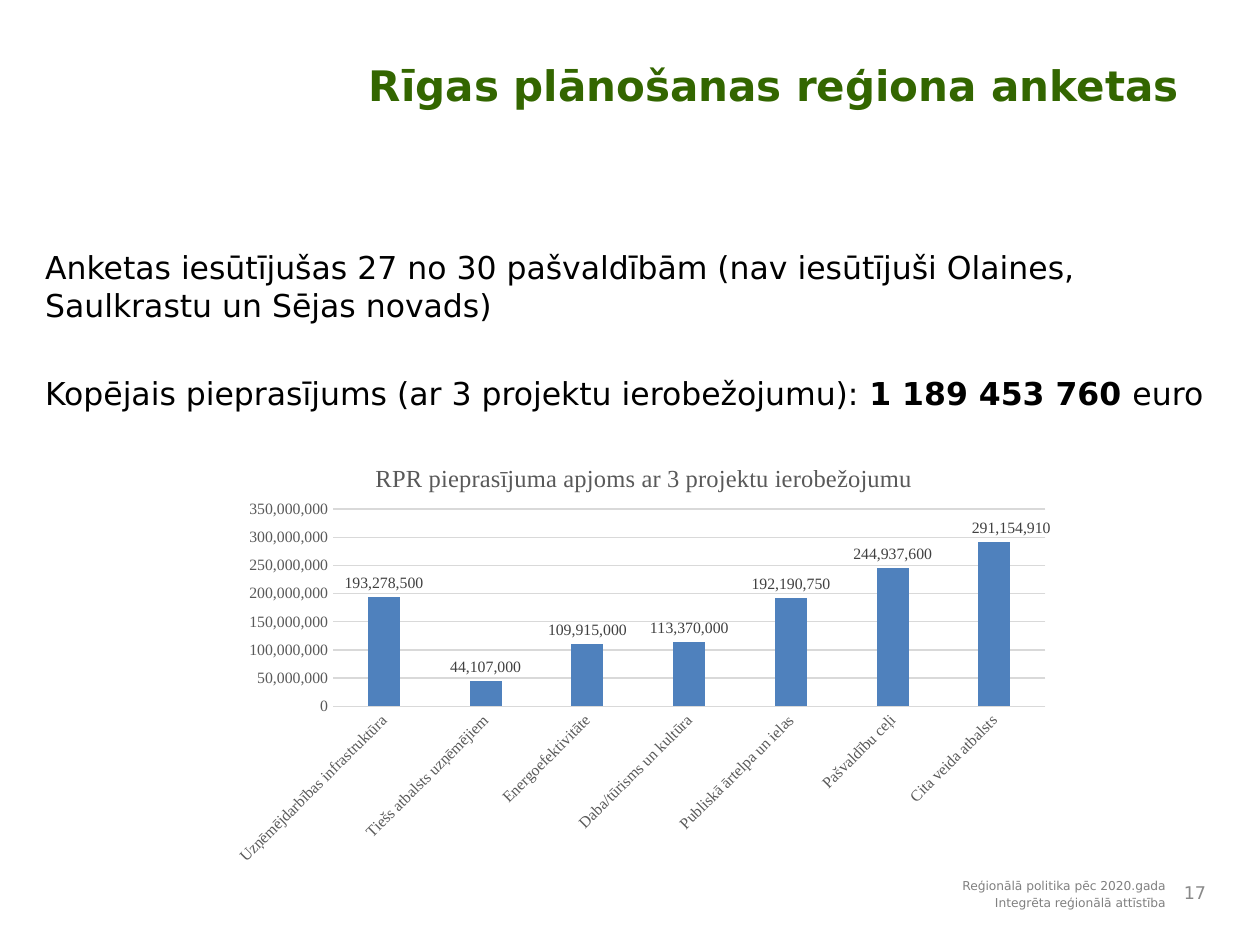
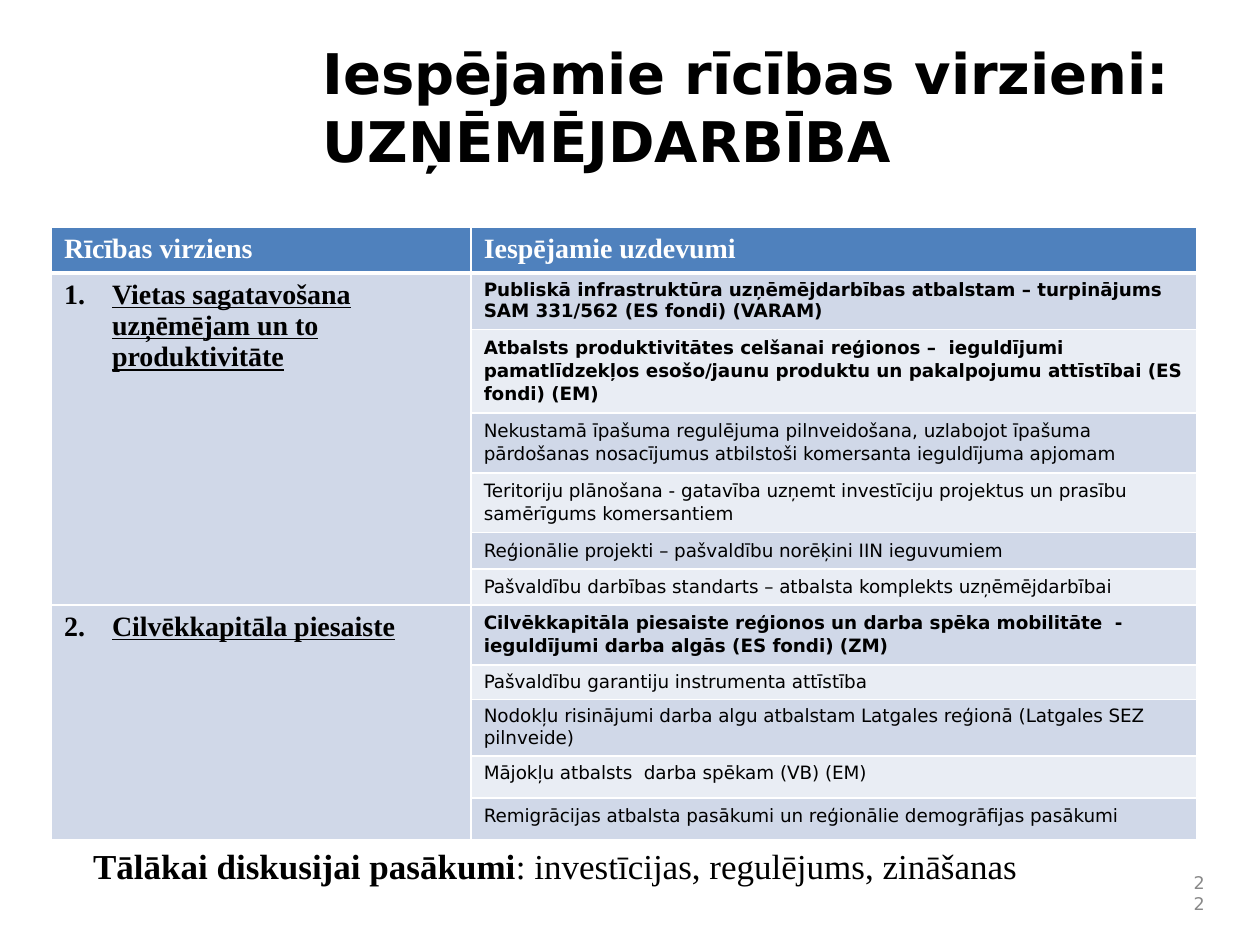
from lxml import etree
from pptx import Presentation
from pptx.chart.data import CategoryChartData
from pptx.dml.color import RGBColor
from pptx.enum.chart import XL_CHART_TYPE, XL_LABEL_POSITION, XL_TICK_MARK
from pptx.enum.text import MSO_ANCHOR, PP_ALIGN
from pptx.oxml import parse_xml
from pptx.oxml.ns import nsdecls, qn
from pptx.util import Inches, Pt

SANS = "DejaVu Sans"
SERIF = "Times New Roman"
BLACK = RGBColor(0x00, 0x00, 0x00)
WHITE = RGBColor(0xFF, 0xFF, 0xFF)
GREEN = RGBColor(0x33, 0x66, 0x00)
BLUE = RGBColor(0x4F, 0x81, 0xBD)
BAND_DARK = RGBColor(0xD0, 0xD8, 0xE8)
BAND_LIGHT = RGBColor(0xE9, 0xED, 0xF4)
GRID_GRAY = RGBColor(0xD9, 0xD9, 0xD9)
AXIS_GRAY = RGBColor(0x59, 0x59, 0x59)
LABEL_GRAY = RGBColor(0x40, 0x40, 0x40)
FOOTER_GRAY = RGBColor(0x80, 0x80, 0x80)
NUMBER_GRAY = RGBColor(0x89, 0x89, 0x89)

NUMBER_FORMAT = "#,##0"
REQUESTS = {
    "Uzņēmējdarbības infrastruktūra": 193278500,
    "Tiešs atbalsts uzņēmējiem": 44107000,
    "Energoefektivitāte": 109915000,
    "Daba/tūrisms un kultūra": 113370000,
    "Publiskā ārtelpa un ielas": 192190750,
    "Pašvaldību ceļi": 244937600,
    "Cita veida atbalsts": 291154910,
}

# Each task: text, bold, line spacing, row height in inches
DIRECTIONS = [
    ("Vietas sagatavošana uzņēmējam un to produktivitāte", [
        ("Publiskā infrastruktūra uzņēmējdarbības atbalstam – turpinājums "
         "SAM 331/562 (ES fondi) (VARAM)", True, 1.0, 0.44),
        ("Atbalsts produktivitātes celšanai reģionos –  ieguldījumi "
         "pamatlīdzekļos esošo/jaunu produktu un pakalpojumu attīstībai "
         "(ES fondi) (EM)", True, 1.07, 0.64),
        ("Nekustamā īpašuma regulējuma pilnveidošana, uzlabojot īpašuma "
         "pārdošanas nosacījumus atbilstoši komersanta ieguldījuma apjomam",
         False, 1.07, 0.46),
        ("Teritoriju plānošana - gatavība uzņemt investīciju projektus un "
         "prasību samērīgums komersantiem", False, 1.07, 0.46),
        ("Reģionālie projekti – pašvaldību norēķini IIN ieguvumiem",
         False, 1.07, 0.28),
        ("Pašvaldību darbības standarts – atbalsta komplekts uzņēmējdarbībai",
         False, 1.07, 0.28),
    ]),
    ("Cilvēkkapitāla piesaiste", [
        ("Cilvēkkapitāla piesaiste reģionos un darba spēka mobilitāte  - "
         "ieguldījumi darba algās (ES fondi) (ZM)", True, 1.07, 0.47),
        ("Pašvaldību garantiju instrumenta attīstība", False, 1.0, 0.27),
        ("Nodokļu risinājumi darba algu atbalstam Latgales reģionā "
         "(Latgales SEZ pilnveide)", False, 1.0, 0.44),
        ("Mājokļu atbalsts  darba spēkam (VB) (EM)", False, 1.0, 0.33),
        ("Remigrācijas atbalsta pasākumi un reģionālie demogrāfijas pasākumi",
         False, 1.07, 0.33),
    ]),
]


def style_font(font, size, color, name=SANS, bold=False):
    font.name = name
    font.size = Pt(size)
    font.bold = bold
    font.color.rgb = color


def add_span(para, text, size, color=BLACK, name=SANS, bold=False):
    span = para.add_run()
    span.text = text
    style_font(span.font, size, color, name, bold)
    return span


def add_box(page, left, top, width, height, anchor=MSO_ANCHOR.TOP):
    """Add an empty wrapping text box and return its text frame."""
    box = page.shapes.add_textbox(
        Inches(left), Inches(top), Inches(width), Inches(height))
    frame = box.text_frame
    frame.word_wrap = True
    frame.vertical_anchor = anchor
    return frame


def add_title(page, lines, left, top, width, size, color):
    para = add_box(page, left, top, width, 1.13).paragraphs[0]
    for index, line in enumerate(lines):
        if index:
            para.add_line_break()
        add_span(para, line, size, color, bold=True)


def add_page_number(page, number, left, width):
    para = add_box(page, left, 6.92, width, 0.33, MSO_ANCHOR.MIDDLE).paragraphs[0]
    para.alignment = PP_ALIGN.RIGHT
    add_span(para, number, 10, NUMBER_GRAY)


def add_footer(page):
    frame = add_box(page, 5.35, 6.92, 4, 0.33)
    first, second = frame.paragraphs[0], frame.add_paragraph()
    second.space_before = Pt(1.4)
    for para, text in ((first, "Reģionālā politika pēc 2020.gada"),
                       (second, "Integrēta reģionālā attīstība")):
        para.alignment = PP_ALIGN.RIGHT
        add_span(para, text, 7, FOOTER_GRAY)


def add_survey_summary(page):
    frame = add_box(page, 0.26, 1.92, 9.64, 1.72)
    add_span(frame.paragraphs[0],
             "Anketas iesūtījušas 27 no 30 pašvaldībām (nav iesūtījuši Olaines, "
             "Saulkrastu un Sējas novads)", 18)
    total = frame.add_paragraph()
    total.space_before = Pt(28.5)
    add_span(total, "Kopējais pieprasījums (ar 3 projektu ierobežojumu): ", 18)
    add_span(total, "1 189 453 760 ", 18, bold=True)
    add_span(total, "euro", 18)


def set_layout(parent, index, **settings):
    """Give a chart element a manual layout, as fractions of the chart."""
    for old in parent.findall(qn("c:layout")):
        parent.remove(old)
    layout = parse_xml(f"<c:layout {nsdecls('c')}><c:manualLayout/></c:layout>")
    for tag, value in settings.items():
        etree.SubElement(layout[0], qn(f"c:{tag}")).set("val", str(value))
    parent.insert(index, layout)


def style_axis(axis):
    axis.major_tick_mark = axis.minor_tick_mark = XL_TICK_MARK.NONE
    style_font(axis.tick_labels.font, 9, AXIS_GRAY, SERIF)


def add_request_chart(page):
    data = CategoryChartData(number_format=NUMBER_FORMAT)
    data.categories = list(REQUESTS)
    data.add_series("Series 1", list(REQUESTS.values()))
    chart = page.shapes.add_chart(
        XL_CHART_TYPE.COLUMN_CLUSTERED,
        Inches(1.74), Inches(3.46), Inches(6.69), Inches(3.48), data).chart
    style_font(chart.font, 10, BLACK, SERIF)
    chart.has_legend = False

    chart.has_title = True
    add_span(chart.chart_title.text_frame.paragraphs[0],
             "RPR pieprasījuma apjoms ar 3 projektu ierobežojumu",
             14, AXIS_GRAY, SERIF)

    categories, values = chart.category_axis, chart.value_axis
    style_axis(categories)
    categories.format.line.color.rgb = GRID_GRAY
    categories.format.line.width = Pt(0.75)
    body = categories._element.find(qn("c:txPr")).find(qn("a:bodyPr"))
    body.set("rot", "-2700000")
    body.set("vert", "horz")
    style_axis(values)
    values.minimum_scale, values.maximum_scale = 0, 350000000
    values.major_unit = 50000000
    values.tick_labels.number_format = NUMBER_FORMAT
    values.tick_labels.number_format_is_linked = False
    values.format.line.fill.background()
    grid = values.major_gridlines.format.line
    grid.color.rgb = GRID_GRAY
    grid.width = Pt(0.75)

    plot = chart.plots[0]
    plot.vary_by_categories = False
    plot.gap_width, plot.overlap = 219, -27
    series = plot.series[0]
    series.format.fill.solid()
    series.format.fill.fore_color.rgb = BLUE
    labels = series.data_labels
    labels.show_value = True
    labels.number_format = NUMBER_FORMAT
    labels.number_format_is_linked = False
    labels.position = XL_LABEL_POSITION.OUTSIDE_END
    style_font(labels.font, 9, LABEL_GRAY, SERIF)
    last_label = series.points[len(REQUESTS) - 1].data_label
    style_font(last_label.font, 9, LABEL_GRAY, SERIF)
    last_label.position = XL_LABEL_POSITION.OUTSIDE_END

    set_layout(series._element.find(".//" + qn("c:dLbl")), 1, x=0.02, y=0)
    set_layout(chart.chart_title._element, 1,
               xMode="edge", yMode="edge", x=0.18, y=0.05)
    set_layout(plot._element.getparent(), 0, layoutTarget="inner",
               xMode="edge", yMode="edge", x=0.135, y=0.167, w=0.845, h=0.45)


def style_cell(cell, fill, top=1, bottom=1):
    """Fill a cell and draw its white borders, with widths in points."""
    cell.fill.solid()
    cell.fill.fore_color.rgb = fill
    properties = cell._tc.get_or_add_tcPr()
    borders = (("lnL", 1), ("lnR", 1), ("lnT", top), ("lnB", bottom))
    for index, (tag, width) in enumerate(borders):
        properties.insert(index, parse_xml(
            f'<a:{tag} {nsdecls("a")} w="{Pt(width)}"><a:solidFill>'
            f'<a:srgbClr val="{WHITE}"/></a:solidFill></a:{tag}>'))


def number_paragraph(para, start):
    properties = para._p.get_or_add_pPr()
    properties.set("marL", str(Inches(0.38)))
    properties.set("indent", str(-Inches(0.38)))
    numbering = etree.SubElement(properties, qn("a:buAutoNum"))
    numbering.set("type", "arabicPeriod")
    numbering.set("startAt", str(start))


def add_direction_table(page):
    tasks = [task for _, group in DIRECTIONS for task in group]
    heights = [0.35] + [task[3] for task in tasks]
    table = page.shapes.add_table(
        len(heights), 2, Inches(0.41), Inches(1.8),
        Inches(9.09), Inches(sum(heights))).table
    for column, width in zip(table.columns, (3.33, 5.76)):
        column.width = Inches(width)
    for row, height in zip(table.rows, heights):
        row.height = Inches(height)

    for column, heading in enumerate(("Rīcības virziens", "Iespējamie uzdevumi")):
        cell = table.cell(0, column)
        style_cell(cell, BLUE, bottom=3)
        add_span(cell.text_frame.paragraphs[0], heading, 16, WHITE, SERIF, True)

    for row, (text, bold, spacing, _) in enumerate(tasks, 1):
        top = 3 if row == 1 else 1
        style_cell(table.cell(row, 0), BAND_DARK, top)
        cell = table.cell(row, 1)
        style_cell(cell, BAND_DARK if row % 2 else BAND_LIGHT, top)
        para = cell.text_frame.paragraphs[0]
        para.line_spacing = spacing
        add_span(para, text, 10.5, bold=bold)

    first_row = 1
    for number, (direction, group) in enumerate(DIRECTIONS, 1):
        cell = table.cell(first_row, 0)
        cell.merge(table.cell(first_row + len(group) - 1, 0))
        para = cell.text_frame.paragraphs[0]
        number_paragraph(para, number)
        add_span(para, direction, 16, name=SERIF, bold=True).font.underline = True
        first_row += len(group)


def add_discussion_note(page):
    para = add_box(page, 0.64, 6.65, 7.8, 0.44).paragraphs[0]
    add_span(para, "Tālākai diskusijai pasākumi", 20, name=SERIF, bold=True)
    add_span(para, ": investīcijas, regulējums, zināšanas", 20, name=SERIF)


def main():
    deck = Presentation()
    deck.slide_width, deck.slide_height = Inches(10), Inches(7.5)
    blank = deck.slide_layouts[6]

    survey = deck.slides.add_slide(blank)
    add_title(survey, ["Rīgas plānošanas reģiona anketas"],
              2.83, 0.42, 6.67, 24, GREEN)
    add_page_number(survey, "17", 9.2, 0.47)
    add_survey_summary(survey)
    add_footer(survey)
    add_request_chart(survey)

    business = deck.slides.add_slide(blank)
    add_title(business, ["Iespējamie rīcības virzieni:", "UZŅĒMĒJDARBĪBA"],
              2.46, 0.26, 7.21, 32, BLACK)
    add_direction_table(business)
    add_page_number(business, "22", 9.33, 0.33)
    add_discussion_note(business)

    deck.save("out.pptx")


if __name__ == "__main__":
    main()
